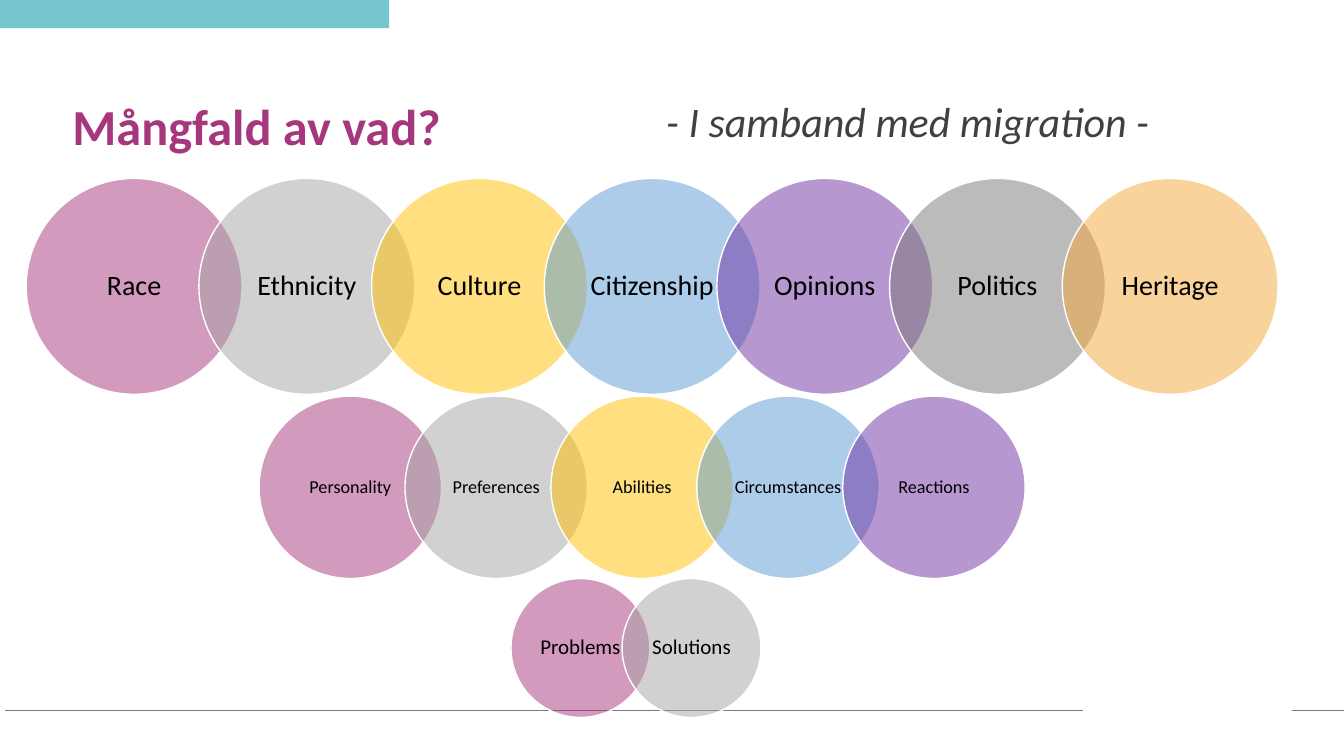
import pptx
import pptx.util
import pptx.dml.color
import pptx.enum.shapes
import pptx.enum.text
import pptx.oxml
import pptx.oxml.ns
from dataclasses import dataclass

Pt = pptx.util.Pt
WIDTH, HEIGHT = pptx.util.Inches(13.333), pptx.util.Inches(7.5)


@dataclass(frozen=True)
class Theme:
    font: str = "Calibri"
    bar: str = "76C6D2"
    rule: str = "797979"
    title: str = "A6377D"
    subtitle: str = "404040"
    label: str = "000000"
    outline: str = "FFFFFF"
    circles: tuple = ("A6377D", "A5A5A5", "FFC000", "5B9BD5", "7030A0", "797979", "F3A839")
    opacity: int = 50
    title_size: int = 36
    subtitle_size: int = 30
    row_sizes: tuple = (20, 13, 15)
    overlap: float = 0.2
    label_inset: float = 0.05


THEME = Theme()


def rgb(value):
    return pptx.dml.color.RGBColor.from_string(value)


def percent(left, top, width, height=0):
    return [int(share * side / 100) for share, side in
            zip((left, top, width, height), (WIDTH, HEIGHT, WIDTH, HEIGHT))]


def style_text(p, text, size, color):
    p.text = text
    p.line_spacing = 0.9
    p.font.name = THEME.font
    p.font.size = Pt(size)
    p.font.color.rgb = rgb(color)


def add_bar(s, box):
    sp = s.shapes.add_shape(pptx.enum.shapes.MSO_SHAPE.RECTANGLE, *box)
    sp.shadow.inherit = False
    sp.fill.solid()
    sp.fill.fore_color.rgb = rgb(THEME.bar)
    sp.line.fill.background()


def add_rule(s, box):
    left, top, width, _ = box
    line = s.shapes.add_connector(pptx.enum.shapes.MSO_CONNECTOR.STRAIGHT,
                                  left, top, left + width, top)
    line.line.color.rgb = rgb(THEME.rule)
    line.line.width = Pt(0.5)
    pptx.oxml.ns.qn("a:effectLst")
    line._element.spPr.append(pptx.oxml.parse_xml(
        f'<a:effectLst {pptx.oxml.ns.nsdecls("a")}/>'))


def add_heading(s, box, text, size, color, bold=False, italic=False):
    tf = s.shapes.add_textbox(*box).text_frame
    tf.word_wrap = True
    p = tf.paragraphs[0]
    style_text(p, text, size, color)
    p.font.bold = bold
    p.font.italic = italic


def add_circle(s, left, top, diameter, text, size, color):
    sp = s.shapes.add_shape(pptx.enum.shapes.MSO_SHAPE.OVAL, left, top, diameter, diameter)
    sp.shadow.inherit = False
    sp.fill.solid()
    sp.fill.fore_color.rgb = rgb(color)
    fill_color = sp._element.spPr.find(".//" + pptx.oxml.ns.qn("a:srgbClr"))
    fill_color.append(pptx.oxml.parse_xml(
        f'<a:alpha {pptx.oxml.ns.nsdecls("a")} val="{THEME.opacity * 1000}"/>'))
    sp.line.color.rgb = rgb(THEME.outline)
    sp.line.width = Pt(1)
    tf = sp.text_frame
    tf.word_wrap = True
    tf.vertical_anchor = pptx.enum.text.MSO_ANCHOR.MIDDLE
    tf.margin_left = tf.margin_right = int(diameter * THEME.label_inset)
    tf.margin_top = tf.margin_bottom = 0
    p = tf.paragraphs[0]
    p.alignment = pptx.enum.text.PP_ALIGN.CENTER
    style_text(p, text, size, THEME.label)


def add_circle_row(s, box, labels, size):
    left, top, width, _ = box
    step = 1 - THEME.overlap
    diameter = int(width / (1 + step * (len(labels) - 1)))
    for i, (label, color) in enumerate(zip(labels, THEME.circles)):
        add_circle(s, left + int(i * step * diameter), top, diameter, label, size, color)


def main():
    prs = pptx.Presentation()
    prs.slide_width, prs.slide_height = WIDTH, HEIGHT
    s = prs.slides.add_slide(prs.slide_layouts[6])

    add_bar(s, percent(0, 0, 28.95, 3.73))
    add_rule(s, percent(0.38, 94, 80.17))
    add_rule(s, percent(96.15, 94, 3.85))
    add_heading(s, percent(4.65, 12.8, 43.05, 21.33), "Mångfald av vad?",
                THEME.title_size, THEME.title, bold=True)
    add_heading(s, percent(48.83, 12.8, 46.28, 21.33), "- I samband med migration -",
                THEME.subtitle_size, THEME.subtitle, italic=True)

    rows = (
        (percent(1.95, 23.6, 93.15),
         ("Race", "Ethnicity", "Culture", "Citizenship", "Opinions", "Politics", "Heritage")),
        (percent(19.28, 52.4, 57),
         ("Personality", "Preferences", "Abilities", "Circumstances", "Reactions")),
        (percent(38.02, 76.53, 18.6), ("Problems", "Solutions")),
    )
    for (box, labels), size in zip(rows, THEME.row_sizes):
        add_circle_row(s, box, labels, size)

    prs.save("out.pptx")


if __name__ == "__main__":
    main()
